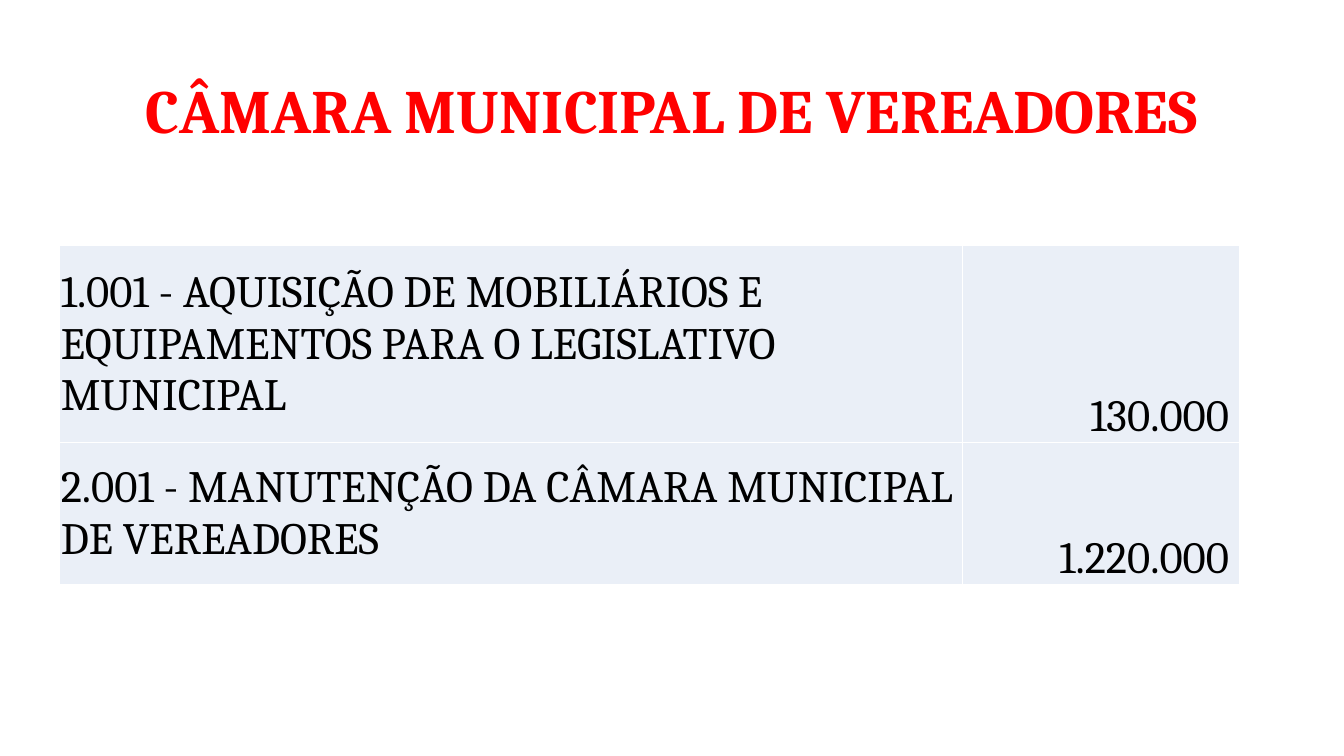
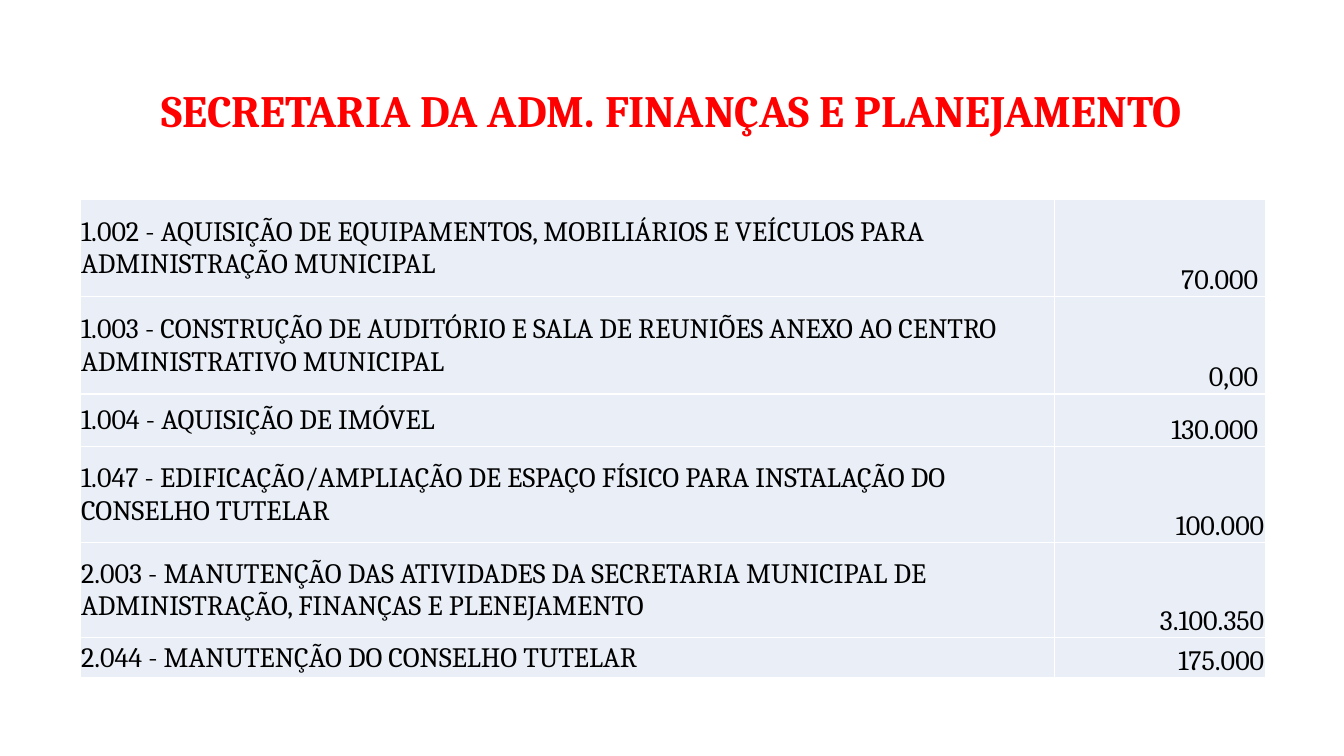
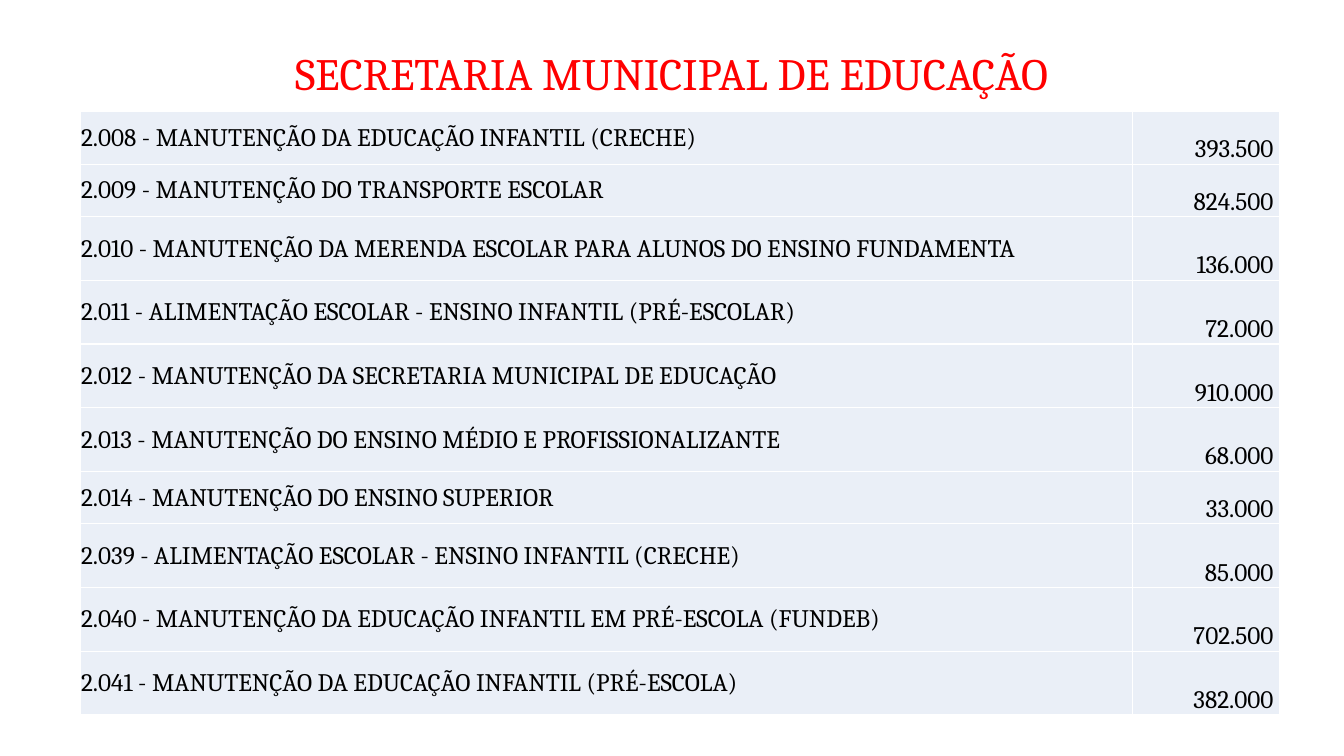
import dataclasses

import lxml.etree
import pptx
import pptx.dml.color
import pptx.enum.text
import pptx.oxml.ns
import pptx.slide
import pptx.table
import pptx.text.text
import pptx.util

Pt = pptx.util.Pt
RGBColor = pptx.dml.color.RGBColor
ALIGN = pptx.enum.text.PP_ALIGN
ANCHOR = pptx.enum.text.MSO_ANCHOR

TITLE_RED = RGBColor(0xFF, 0x00, 0x00)
TEXT_BLACK = RGBColor(0x00, 0x00, 0x00)
CELL_BLUE = RGBColor(0xEA, 0xEF, 0xF7)
BORDER_WHITE = RGBColor(0xFF, 0xFF, 0xFF)

FONT = "Cambria"
BLANK_LAYOUT = 6
CELL_INSET = 0.7
AMOUNT_PADDING = 0.22
SHORT_ROW = 37.5
TALL_ROW = 45.5


@dataclasses.dataclass(frozen=True)
class BudgetRow:
    label: str
    amount: str
    height: float
    padded: bool = True


@dataclasses.dataclass(frozen=True)
class BudgetPage:
    title: str
    title_size: float
    title_bold: bool
    title_height: float
    left: float
    top: float
    columns: tuple[float, float]
    text_size: float
    rows: list[BudgetRow]


PAGES = [
    BudgetPage(
        "CÂMARA MUNICIPAL DE VEREADORES", 44, True, 104.4,
        42.75, 175.25, (644.5, 198.5), 32,
        [
            BudgetRow("1.001 - AQUISIÇÃO DE MOBILIÁRIOS E EQUIPAMENTOS PARA O LEGISLATIVO MUNICIPAL", "130.000", 141),
            BudgetRow("2.001 - MANUTENÇÃO DA CÂMARA MUNICIPAL DE VEREADORES", "1.220.000", 101.5),
        ],
    ),
    BudgetPage(
        "SECRETARIA DA ADM. FINANÇAS E PLANEJAMENTO", 32, True, 104.4,
        57.25, 142.5, (696, 150.5), 20,
        [
            BudgetRow("1.002 - AQUISIÇÃO DE EQUIPAMENTOS, MOBILIÁRIOS E VEÍCULOS PARA ADMINISTRAÇÃO MUNICIPAL", "70.000", 69.5),
            BudgetRow("1.003 - CONSTRUÇÃO DE AUDITÓRIO E SALA DE REUNIÕES ANEXO AO CENTRO ADMINISTRATIVO MUNICIPAL", "0,00", 69.5),
            BudgetRow("1.004 - AQUISIÇÃO DE IMÓVEL", "130.000", SHORT_ROW),
            BudgetRow("1.047 - EDIFICAÇÃO/AMPLIAÇÃO DE ESPAÇO FÍSICO PARA INSTALAÇÃO DO CONSELHO TUTELAR", "100.000", 68.5, False),
            BudgetRow("2.003 - MANUTENÇÃO DAS ATIVIDADES DA SECRETARIA MUNICIPAL DE ADMINISTRAÇÃO, FINANÇAS E PLENEJAMENTO", "3.100.350", 68, False),
            BudgetRow("2.044 - MANUTENÇÃO DO CONSELHO TUTELAR", "175.000", 28.5, False),
        ],
    ),
    BudgetPage(
        "SECRETARIA MUNICIPAL DE EDUCAÇÃO", 32, False, 51,
        57.25, 79.75, (751.5, 105.5), 18,
        [
            BudgetRow("2.008 - MANUTENÇÃO DA EDUCAÇÃO INFANTIL (CRECHE)", "393.500", SHORT_ROW),
            BudgetRow("2.009 - MANUTENÇÃO DO TRANSPORTE ESCOLAR", "824.500", SHORT_ROW),
            BudgetRow("2.010 - MANUTENÇÃO DA MERENDA ESCOLAR PARA ALUNOS DO ENSINO FUNDAMENTA", "136.000", TALL_ROW),
            BudgetRow("2.011 - ALIMENTAÇÃO ESCOLAR - ENSINO INFANTIL (PRÉ-ESCOLAR)", "72.000", TALL_ROW),
            BudgetRow("2.012 - MANUTENÇÃO DA SECRETARIA MUNICIPAL DE EDUCAÇÃO", "910.000", TALL_ROW),
            BudgetRow("2.013 - MANUTENÇÃO DO ENSINO MÉDIO E PROFISSIONALIZANTE", "68.000", TALL_ROW),
            BudgetRow("2.014 - MANUTENÇÃO DO ENSINO SUPERIOR", "33.000", SHORT_ROW),
            BudgetRow("2.039 - ALIMENTAÇÃO ESCOLAR - ENSINO INFANTIL (CRECHE)", "85.000", TALL_ROW),
            BudgetRow("2.040 - MANUTENÇÃO DA EDUCAÇÃO INFANTIL EM PRÉ-ESCOLA (FUNDEB)", "702.500", TALL_ROW),
            BudgetRow("2.041 - MANUTENÇÃO DA EDUCAÇÃO INFANTIL (PRÉ-ESCOLA)", "382.000", TALL_ROW),
        ],
    ),
]


def write_text(
    frame: pptx.text.text.TextFrame,
    text: str,
    size: float,
    color: RGBColor,
    align: ALIGN,
    bold: bool = False,
) -> None:
    frame.text = text
    frame.word_wrap = True
    para = frame.paragraphs[0]
    para.alignment = align
    for span in para.runs:
        span.font.name = FONT
        span.font.size = Pt(size)
        span.font.bold = bold
        span.font.color.rgb = color


def add_title(slide: pptx.slide.Slide, page: BudgetPage) -> None:
    box = slide.shapes.add_textbox(Pt(66), Pt(28.75), Pt(828), Pt(page.title_height))
    frame = box.text_frame
    write_text(frame, page.title, page.title_size, TITLE_RED, ALIGN.CENTER, page.title_bold)
    frame.vertical_anchor = ANCHOR.MIDDLE
    frame.paragraphs[0].line_spacing = 0.9


def add_borders(cell: pptx.table._Cell) -> None:
    qn = pptx.oxml.ns.qn
    properties = cell._tc.get_or_add_tcPr()
    for side in ("a:lnL", "a:lnR", "a:lnT", "a:lnB"):
        line = lxml.etree.SubElement(properties, qn(side), w=str(Pt(1)))
        fill = lxml.etree.SubElement(line, qn("a:solidFill"))
        lxml.etree.SubElement(fill, qn("a:srgbClr"), val=str(BORDER_WHITE))


def fill_cell(
    cell: pptx.table._Cell,
    text: str,
    size: float,
    align: ALIGN,
    anchor: ANCHOR,
    right_inset: float = CELL_INSET,
) -> None:
    write_text(cell.text_frame, text, size, TEXT_BLACK, align)
    cell.vertical_anchor = anchor
    cell.margin_left = cell.margin_top = Pt(CELL_INSET)
    cell.margin_right = Pt(right_inset)
    cell.margin_bottom = Pt(0)
    add_borders(cell)
    cell.fill.solid()
    cell.fill.fore_color.rgb = CELL_BLUE


def add_budget_table(slide: pptx.slide.Slide, page: BudgetPage) -> None:
    height = sum(row.height for row in page.rows)
    table = slide.shapes.add_table(
        len(page.rows), len(page.columns),
        Pt(page.left), Pt(page.top), Pt(sum(page.columns)), Pt(height),
    ).table
    table.first_row = False
    table.horz_banding = False
    for column, width in zip(table.columns, page.columns):
        column.width = Pt(width)
    for index, row in enumerate(page.rows):
        table.rows[index].height = Pt(row.height)
        padding = AMOUNT_PADDING * page.text_size if row.padded else 0
        fill_cell(table.cell(index, 0), row.label, page.text_size, ALIGN.LEFT, ANCHOR.MIDDLE)
        fill_cell(
            table.cell(index, 1), row.amount, page.text_size,
            ALIGN.RIGHT, ANCHOR.BOTTOM, CELL_INSET + padding,
        )


def main() -> None:
    deck = pptx.Presentation()
    deck.slide_width = Pt(960)
    deck.slide_height = Pt(540)
    for page in PAGES:
        slide = deck.slides.add_slide(deck.slide_layouts[BLANK_LAYOUT])
        add_title(slide, page)
        add_budget_table(slide, page)
    deck.save("out.pptx")


if __name__ == "__main__":
    main()
